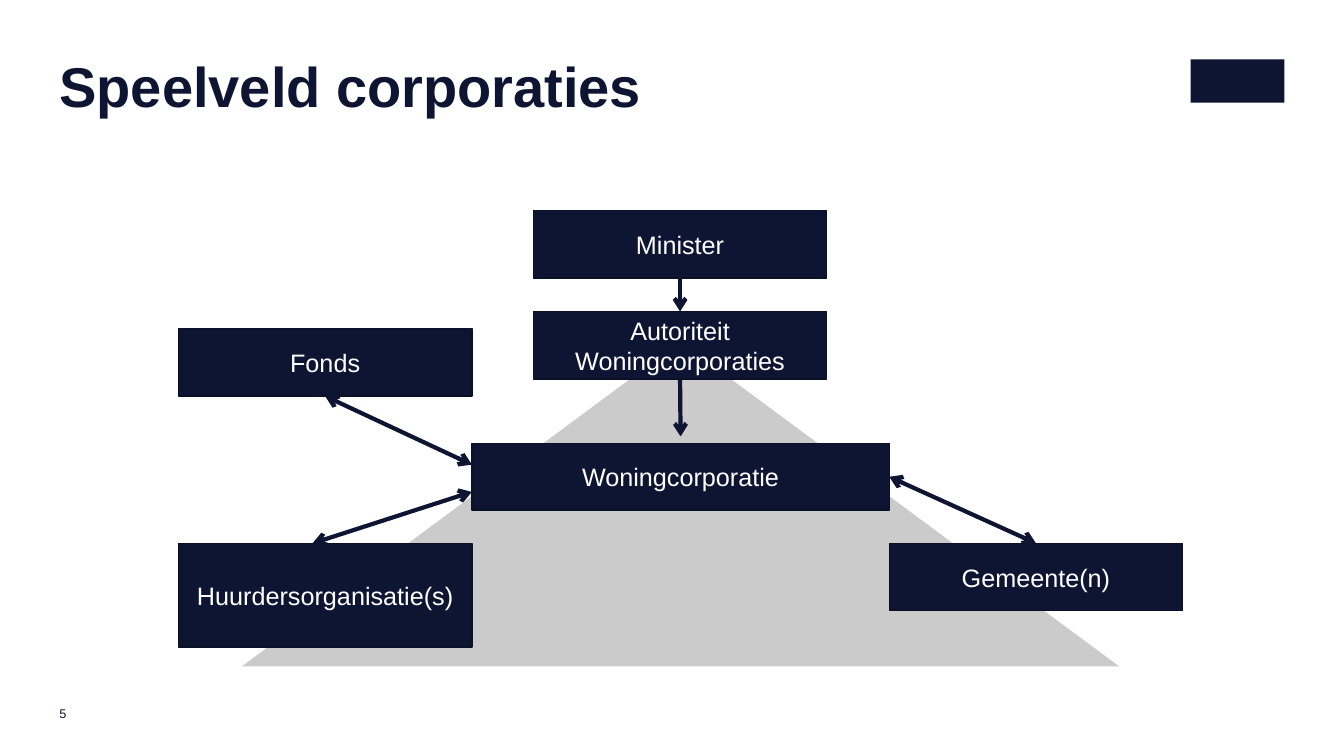
from dataclasses import dataclass
from typing import Optional

from lxml.etree import SubElement
from pptx import Presentation
from pptx.dml.color import RGBColor
from pptx.enum.shapes import MSO_CONNECTOR, MSO_SHAPE
from pptx.enum.text import MSO_ANCHOR, MSO_AUTO_SIZE, PP_ALIGN
from pptx.oxml.ns import qn
from pptx.util import Inches, Pt

COLORS = {"navy": "0D1533", "edge": "0A1026", "gray": "CBCBCB", "white": "FFFFFF"}
FONT = "Arial"
BOTTOM, LEFT, RIGHT, TOP = 2, 1, 3, 0


@dataclass
class Box:
    text: str
    x: float
    y: float
    w: float = 2.91
    h: float = 0.67


@dataclass
class Arrow:
    start: tuple[float, float]
    end: tuple[float, float]
    source: Optional[tuple[str, int]] = None  # box name and side
    target: Optional[tuple[str, int]] = None
    double: bool = False


BOXES = [
    Box("Woningcorporatie", 4.68, 4.4, 4.14, 0.66),
    Box("Huurdersorganisatie(s)", 1.77, 5.39, h=1.03),
    Box("Gemeente(n)", 8.82, 5.39),
    Box("Fonds", 1.77, 3.26),
    Box("Minister", 5.29, 2.09),
    Box("Autoriteit Woningcorporaties", 5.29, 3.09),
]
ARROWS = [
    Arrow((8.82, 4.73), (10.27, 5.39), ("Woningcorporatie", RIGHT),
          ("Gemeente(n)", TOP), double=True),
    Arrow((3.22, 3.93), (4.68, 4.61), ("Fonds", BOTTOM), double=True),
    Arrow((3.1, 5.39), (4.68, 4.88), double=True),
    Arrow((6.75, 3.76), (6.75, 4.33), ("Autoriteit Woningcorporaties", BOTTOM)),
    Arrow((6.75, 2.76), (6.75, 3.09), ("Minister", BOTTOM),
          ("Autoriteit Woningcorporaties", TOP)),
]


def color(name: str) -> RGBColor:
    return RGBColor.from_string(COLORS[name])


def style(par, size: float, tint: str, bold: bool = False) -> None:
    font = par.font
    font.name, font.size, font.bold = FONT, Pt(size), bold
    font.color.rgb = color(tint)


def clear(frame) -> None:
    frame.margin_left = frame.margin_top = 0
    frame.margin_right = frame.margin_bottom = 0


def add_form(slide, kind, x: float, y: float, w: float, h: float, fill: str):
    form = slide.shapes.add_shape(kind, Inches(x), Inches(y), Inches(w), Inches(h))
    form.shadow.inherit = False
    form.fill.solid()
    form.fill.fore_color.rgb = color(fill)
    form.line.fill.background()
    return form


def add_box(slide, box: Box):
    form = add_form(slide, MSO_SHAPE.RECTANGLE, box.x, box.y, box.w, box.h, "navy")
    form.line.color.rgb = color("edge")
    form.line.width = Pt(1)
    frame = form.text_frame
    frame.word_wrap = True
    frame.vertical_anchor = MSO_ANCHOR.MIDDLE
    par = frame.paragraphs[0]
    par.text = box.text
    par.alignment = PP_ALIGN.CENTER
    style(par, 18, "white")
    return form


def add_arrow(slide, arrow: Arrow, forms: dict) -> None:
    ends = [Inches(v) for v in arrow.start + arrow.end]
    link = slide.shapes.add_connector(MSO_CONNECTOR.STRAIGHT, *ends)
    if arrow.source:
        name, side = arrow.source
        link.begin_connect(forms[name], side)
    if arrow.target:
        name, side = arrow.target
        link.end_connect(forms[name], side)
    link.line.color.rgb = color("navy")
    link.line.width = Pt(3)
    # Arrowheads
    line = link.line._get_or_add_ln()
    for tag in ("a:headEnd", "a:tailEnd") if arrow.double else ("a:tailEnd",):
        SubElement(line, qn(tag), type="arrow")
    SubElement(link._element.spPr, qn("a:effectLst"))


def add_title(slide, text: str) -> None:
    title = slide.shapes.title
    title.left, title.top = Inches(0.59), Inches(0.59)
    title.width, title.height = Inches(10.04), Inches(0.42)
    frame = title.text_frame
    clear(frame)
    frame.word_wrap = True
    frame.auto_size = MSO_AUTO_SIZE.NONE
    frame.vertical_anchor = MSO_ANCHOR.TOP
    par = frame.paragraphs[0]
    par.text = text
    par.alignment = PP_ALIGN.LEFT
    par.line_spacing = 0.9
    style(par, 40, "navy", bold=True)


def add_number(slide, text: str) -> None:
    spot = slide.shapes.add_textbox(Inches(0.59), Inches(6.96), Inches(0.23), Inches(0.23))
    frame = spot.text_frame
    clear(frame)
    frame.word_wrap = False
    frame.vertical_anchor = MSO_ANCHOR.MIDDLE
    par = frame.paragraphs[0]
    par.text = text
    par.alignment = PP_ALIGN.LEFT
    style(par, 9, "navy")


def main() -> None:
    deck = Presentation()
    deck.slide_width, deck.slide_height = Inches(13.33), Inches(7.5)
    slide = deck.slides.add_slide(deck.slide_layouts[5])

    # Header and page number
    add_title(slide, "Speelveld corporaties")
    add_form(slide, MSO_SHAPE.RECTANGLE, 11.81, 0.59, 0.93, 0.43, "navy")
    add_number(slide, "5")

    # Backdrop, parties and their relations
    add_form(slide, MSO_SHAPE.ISOSCELES_TRIANGLE, 2.4, 3.39, 8.7, 3.22, "gray")
    forms = {box.text: add_box(slide, box) for box in BOXES}
    for arrow in ARROWS:
        add_arrow(slide, arrow, forms)

    deck.save("out.pptx")


if __name__ == "__main__":
    main()
